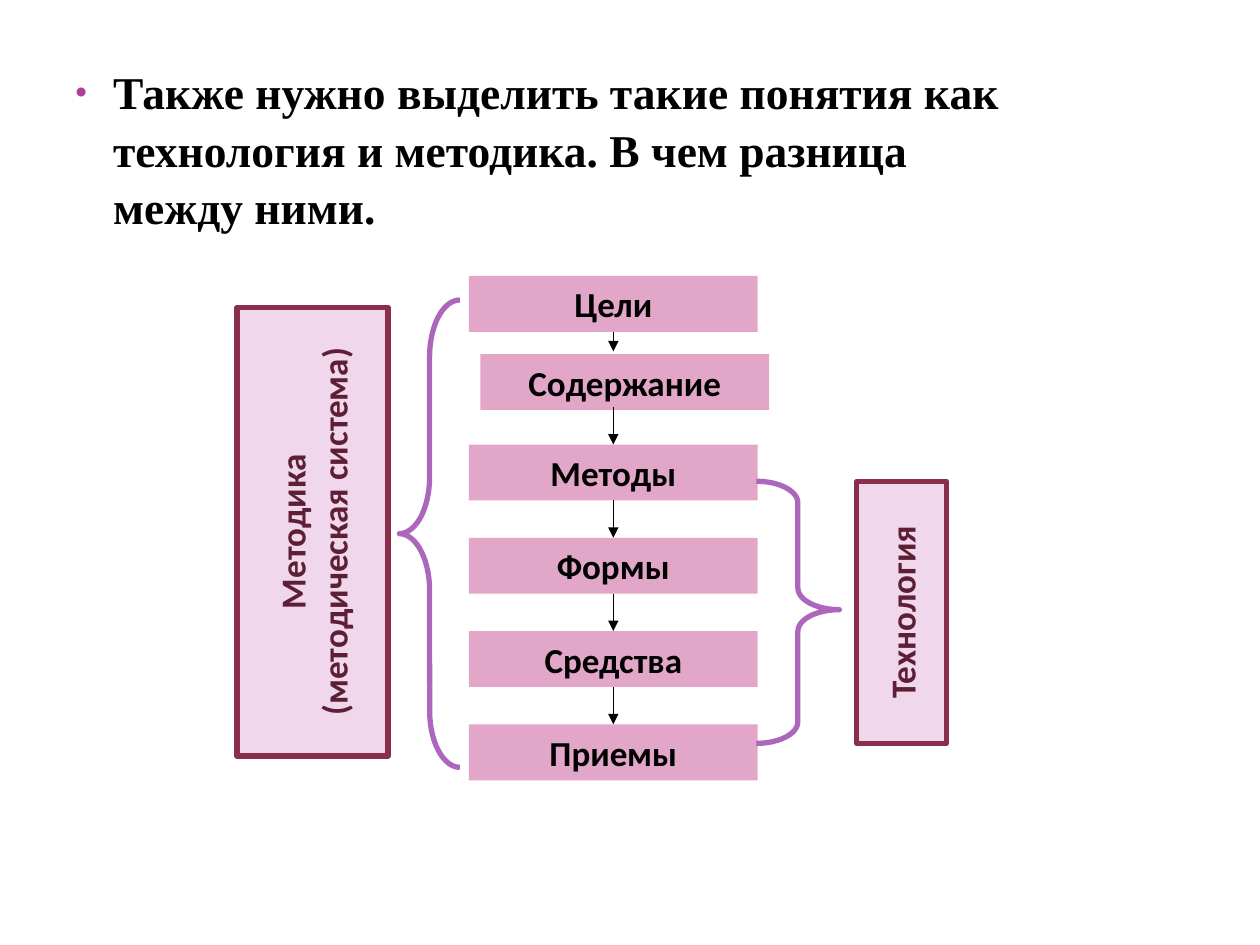
from dataclasses import dataclass

from lxml.etree import SubElement
from pptx import Presentation
from pptx.dml.color import RGBColor
from pptx.enum.shapes import MSO_CONNECTOR, MSO_SHAPE
from pptx.enum.text import MSO_ANCHOR, PP_ALIGN
from pptx.oxml.ns import qn
from pptx.util import Pt

STEP_LEFT, STEP_WIDTH, STEP_HEIGHT = 268, 165, 32
STEP_CENTER = STEP_LEFT + STEP_WIDTH / 2
METHODS_TOP, STEP_PITCH = 254, 53.3
TOP, BOTTOM = 0, 2


@dataclass
class Step:
    label: str
    top: float
    left: float = STEP_LEFT


@dataclass
class Concept:
    lines: list[str]
    left: float
    top: float
    width: float
    height: float


@dataclass
class Brace:
    preset: MSO_SHAPE
    left: float
    top: float
    width: float
    height: float
    curve: float
    tip: float


STEPS = [Step("Цели", 157.7), Step("Содержание", 202.3, 274.5)] + [
    Step(label, METHODS_TOP + index * STEP_PITCH)
    for index, label in enumerate(["Методы", "Формы", "Средства", "Приемы"])
]
CONCEPTS = [
    Concept(["Методика", "(методическая система)"], 135.4, 175.7, 86.4, 256.3),
    Concept(["Технология"], 489.6, 275, 51.1, 149.8),
]
BRACES = [
    Brace(MSO_SHAPE.LEFT_BRACE, 228.2, 171.4, 34.6, 267.1, 0.94, 0.5),
    Brace(MSO_SHAPE.RIGHT_BRACE, 432.2, 275, 47.5, 149.8, 0.26, 0.49),
]


def color(hex_value: str) -> RGBColor:
    return RGBColor.from_string(hex_value)


def add_heading(slide, text: str) -> None:
    frame = slide.shapes.add_textbox(Pt(36), Pt(31.7), Pt(570), Pt(476.6)).text_frame
    frame.word_wrap = True
    paragraph = frame.paragraphs[0]
    paragraph.text = text
    paragraph.line_spacing = 1.05
    properties = paragraph._p.get_or_add_pPr()
    properties.set("marL", str(Pt(21.6)))
    properties.set("indent", str(Pt(-21.6)))
    bullet_color = SubElement(properties, qn("a:buClr"))
    SubElement(bullet_color, qn("a:srgbClr"), val="B13F9A")
    SubElement(properties, qn("a:buSzPct"), val="73000")
    SubElement(properties, qn("a:buFont"), typeface="Arial")
    SubElement(properties, qn("a:buChar"), char="•")
    style_font(paragraph, "Times New Roman", 26, "000000")


def style_font(paragraph, name: str, size: float, hex_value: str) -> None:
    font = paragraph.font
    font.name, font.size, font.bold = name, Pt(size), True
    font.color.rgb = color(hex_value)


def add_box(slide, lines: list[str], left: float, top: float, width: float,
            height: float, fill: str, text_color: str):
    """Add a borderless rectangle with centred bold lines of text."""
    box = slide.shapes.add_shape(
        MSO_SHAPE.RECTANGLE, Pt(left), Pt(top), Pt(width), Pt(height))
    box.shadow.inherit = False
    box.fill.solid()
    box.fill.fore_color.rgb = color(fill)
    box.line.fill.background()
    frame = box.text_frame
    frame.word_wrap = True
    frame.vertical_anchor = MSO_ANCHOR.MIDDLE
    frame.text = "\n".join(lines)
    for paragraph in frame.paragraphs:
        paragraph.alignment = PP_ALIGN.CENTER
        style_font(paragraph, "Calibri", 20, text_color)
    return box


def set_outline(shape, hex_value: str, width: float) -> None:
    shape.line.color.rgb = color(hex_value)
    shape.line.width = Pt(width)


def add_step(slide, step: Step):
    return add_box(slide, [step.label], step.left, step.top, STEP_WIDTH,
                   STEP_HEIGHT, "E2A7C8", "000000")


def add_concept(slide, concept: Concept) -> None:
    box = add_box(slide, concept.lines, concept.left, concept.top,
                  concept.width, concept.height, "F1D7EC", "5C1F34")
    set_outline(box, "8A2E4E", 3)
    box.text_frame._txBody.bodyPr.set("vert", "vert270")


def add_arrow(slide, start: float, end: float):
    arrow = slide.shapes.add_connector(
        MSO_CONNECTOR.STRAIGHT, Pt(STEP_CENTER), Pt(start), Pt(STEP_CENTER), Pt(end))
    set_outline(arrow, "000000", 0.75)
    SubElement(arrow.line._get_or_add_ln(), qn("a:tailEnd"), type="triangle")
    SubElement(arrow._element.spPr, qn("a:effectLst"))
    return arrow


def add_brace(slide, brace: Brace) -> None:
    shape = slide.shapes.add_shape(
        brace.preset, Pt(brace.left), Pt(brace.top), Pt(brace.width), Pt(brace.height))
    shape.shadow.inherit = False
    shape.adjustments[0] = brace.curve
    shape.adjustments[1] = brace.tip
    shape.fill.background()
    set_outline(shape, "AC66BB", 3)


def main() -> None:
    presentation = Presentation()
    presentation.slide_width, presentation.slide_height = Pt(720), Pt(540)
    slide = presentation.slides.add_slide(presentation.slide_layouts[6])

    add_heading(slide, "Также нужно выделить такие понятия как технология и "
                       "методика. В чем разница между ними.")
    boxes = [add_step(slide, step) for step in STEPS]

    goals, content, methods = STEPS[:3]
    add_arrow(slide, goals.top + STEP_HEIGHT, content.top - 1.5).begin_connect(
        boxes[0], BOTTOM)
    add_arrow(slide, content.top + STEP_HEIGHT - 2, methods.top).end_connect(
        boxes[2], TOP)
    for index in range(2, len(STEPS) - 1):
        arrow = add_arrow(slide, STEPS[index].top + STEP_HEIGHT, STEPS[index + 1].top)
        arrow.begin_connect(boxes[index], BOTTOM)
        arrow.end_connect(boxes[index + 1], TOP)

    for brace in BRACES:
        add_brace(slide, brace)
    for concept in CONCEPTS:
        add_concept(slide, concept)
    presentation.save("out.pptx")


if __name__ == "__main__":
    main()
